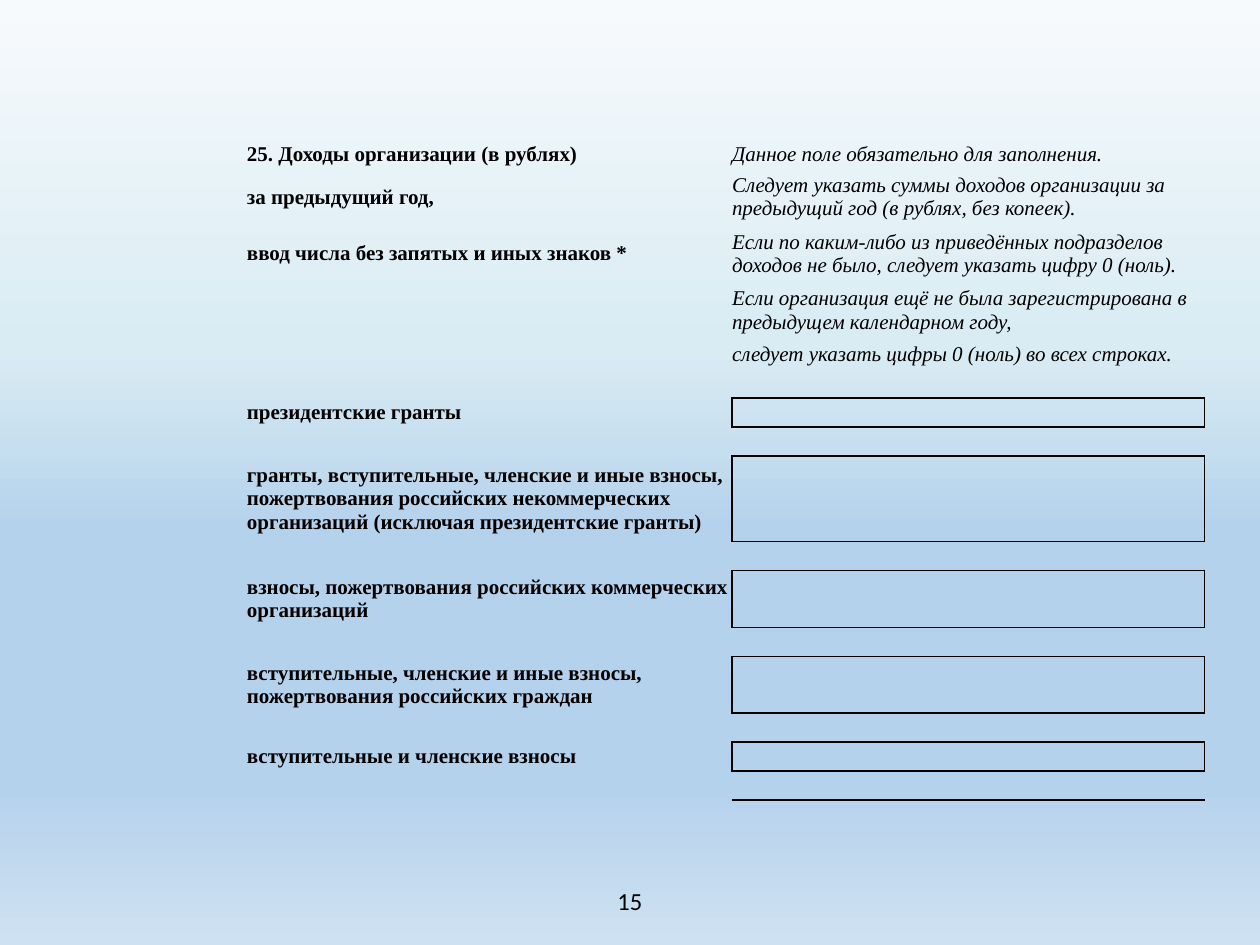
from lxml.etree import SubElement as Sub
from pptx import Presentation
from pptx.dml.color import RGBColor as Rgb
from pptx.enum.text import MSO_ANCHOR as Anchor, PP_ALIGN as Align
from pptx.oxml.ns import qn
from pptx.util import Inches, Pt

HUES = {"ink": "000000", "top": "F7FAFD", "mist": "D9ECF3",
        "blue": "B5D2EC", "foot": "CEE1F2"}
STOPS = [(0, "top"), (37, "mist"), (56, "blue"), (83, "blue"), (100, "foot")]
PLAIN = "{2D5ABB26-0587-4C30-8999-92F81FD0307C}"
FACE = "Times New Roman"
GAP = 0.23

# label, hint, row height
HINTS = [
    ("25. Доходы организации (в рублях)",
     "Данное поле обязательно для заполнения. ", 0.23),
    ("за предыдущий год,",
     "Следует указать суммы доходов организации за предыдущий год "
     "(в рублях, без копеек).", 0.45),
    ("ввод числа без запятых и иных знаков *",
     "Если по каким-либо из приведённых подразделов доходов не было, "
     "следует указать цифру 0 (ноль).", 0.45),
    ("", "Если организация ещё не была зарегистрирована в предыдущем "
     "календарном году,", 0.45),
    ("", "следует указать цифры 0 (ноль) во всех строках.", 0.24),
]
# label, row height
FIELDS = [
    ("президентские гранты", 0.23),
    ("гранты, вступительные, членские и иные взносы, пожертвования "
     "российских некоммерческих организаций (исключая президентские "
     "гранты)", 0.68),
    ("взносы, пожертвования российских коммерческих организаций", 0.45),
    ("вступительные, членские и иные взносы, пожертвования российских "
     "граждан", 0.45),
    ("вступительные и членские взносы", 0.23),
]


def paint(slide):
    """Fill the background with a vertical gradient."""
    fill = slide.background.fill
    fill.gradient()
    fill.gradient_angle = 270
    stops = next(slide.element.iter(qn("a:gsLst")))
    for stop in list(stops):
        stops.remove(stop)
    for spot, hue in STOPS:
        stop = Sub(stops, qn("a:gs"), pos=str(spot * 1000))
        Sub(stop, qn("a:srgbClr"), val=HUES[hue])


def write(par, text, size, face, **look):
    run = par.add_run()
    run.text = text
    run.font.color.rgb = Rgb.from_string(HUES["ink"])
    for key, val in {"size": Pt(size), "name": face, **look}.items():
        setattr(run.font, key, val)


def edge(cell, sides):
    """Rule the named sides (of L, R, T, B) and leave the others bare."""
    props = cell._tc.get_or_add_tcPr()
    for side in "LRTB":
        line = Sub(props, qn("a:ln" + side), w=str(Pt(1)))
        if side in sides:
            fill = Sub(line, qn("a:solidFill"))
            Sub(fill, qn("a:srgbClr"), val=HUES["ink"])
        else:
            Sub(line, qn("a:noFill"))


def fill_cell(cell, text, sides, **look):
    form = {"vertical_anchor": Anchor.MIDDLE, "margin_left": 0,
            "margin_right": 0, "margin_top": 0, "margin_bottom": 0}
    for key, val in form.items():
        setattr(cell, key, val)
    edge(cell, sides)
    cell.fill.background()
    par = cell.text_frame.paragraphs[0]
    if text:
        write(par, text, 12, FACE, **look)
    else:
        Sub(par._p, qn("a:endParaRPr"), sz="1200")


def income(slide, left, top, wide, high):
    """Place the form: hints first, then ruled fields between gaps."""
    rows = [(*hint, "", "") for hint in HINTS] + [("", "", GAP, "", "B")]
    for name, tall in FIELDS:
        rows += [(name, "", tall, "R", "LRTB"), ("", "", GAP, "", "TB")]
    frame = slide.shapes.add_table(len(rows), 2, left, top, wide, high)
    table = frame.table
    table.first_row = table.horz_banding = False
    next(table._tbl.iter(qn("a:tableStyleId"))).text = PLAIN
    table.columns[0].width = Inches(3.85)
    table.columns[1].width = wide - Inches(3.85)
    for i, (name, hint, tall, near, far) in enumerate(rows):
        table.rows[i].height = Inches(tall)
        fill_cell(table.cell(i, 0), name, near, bold=True)
        fill_cell(table.cell(i, 1), hint, far, italic=True)
    table.cell(0, 1).text_frame.paragraphs[0].alignment = Align.JUSTIFY


def folio(slide, left, top, wide, high):
    """Place the page number."""
    frame = slide.shapes.add_textbox(left, top, wide, high).text_frame
    frame.word_wrap = True
    frame.vertical_anchor = Anchor.MIDDLE
    par = frame.paragraphs[0]
    par.alignment = Align.CENTER
    write(par, "15", 14, "Calibri")


def main():
    deck = Presentation()
    deck.slide_width, deck.slide_height = Inches(10), Inches(7.5)
    slide = deck.slides.add_slide(deck.slide_layouts[6])
    paint(slide)
    income(slide, *map(Inches, (1.96, 1.11, 7.6, 5.26)))
    folio(slide, *map(Inches, (4.72, 6.95, 0.56, 0.4)))
    deck.save("out.pptx")


if __name__ == "__main__":
    main()
